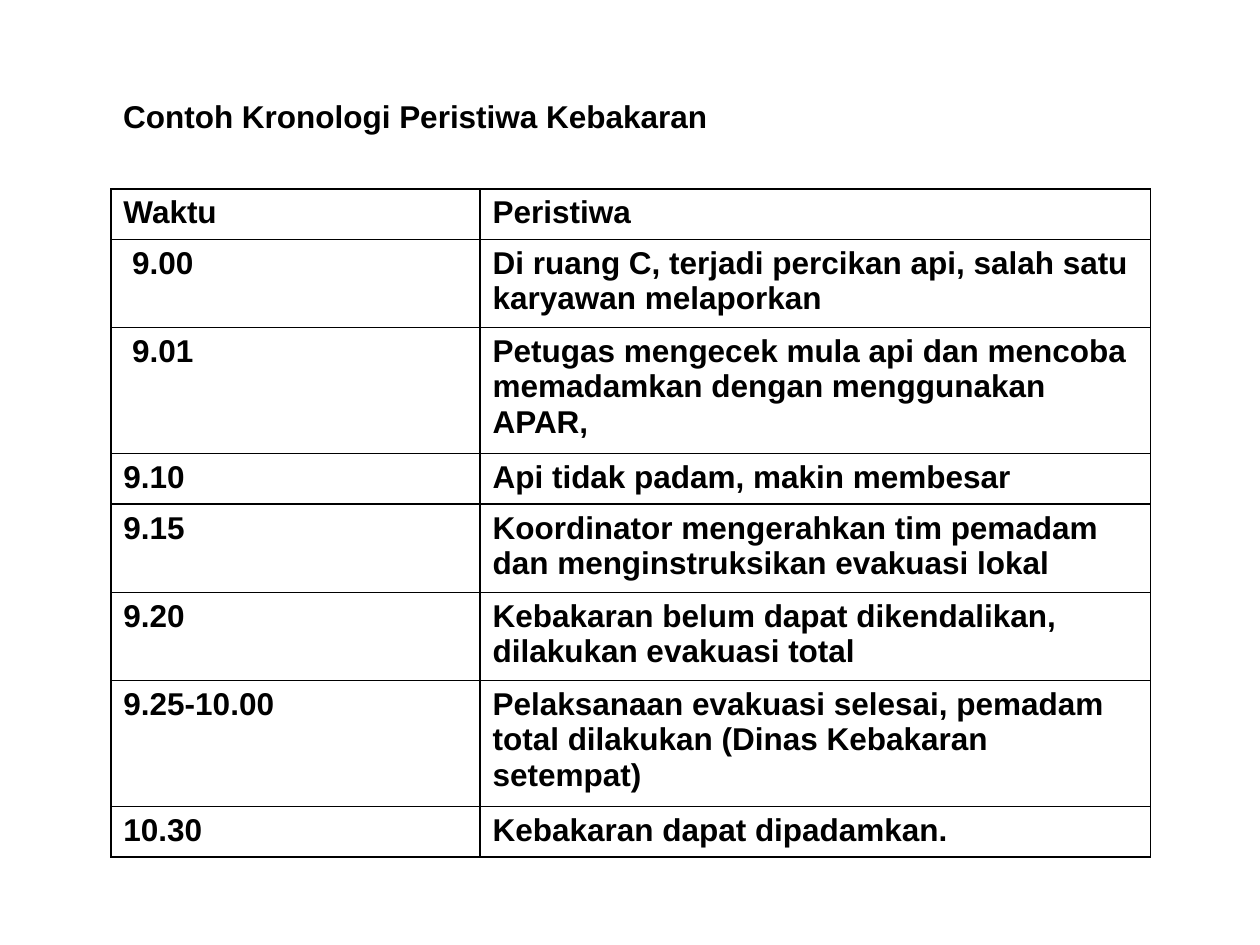
"""Build a slide with a timeline table of a fire incident."""
from dataclasses import dataclass

from lxml.etree import SubElement
from pptx import Presentation
from pptx.dml.color import RGBColor as Color
from pptx.enum.text import MSO_ANCHOR as Anchor
from pptx.oxml.ns import qn
from pptx.util import Inches, Pt


@dataclass(frozen=True)
class Theme:
    font: str = "Arial"
    ink: str = "000000"
    paper: str = "FFFFFF"
    text_size: int = 18
    border_width: int = 1


theme = Theme()
font_format = {"name": theme.font, "size": Pt(theme.text_size), "bold": True}


def write_text(text_frame, text):
    run = text_frame.paragraphs[0].add_run()
    run.text = text
    for name, value in font_format.items():
        setattr(run.font, name, value)
    run.font.color.rgb = Color.from_string(theme.ink)


def add_borders(cell):
    properties = cell._tc.get_or_add_tcPr()
    for position, side in enumerate(("lnL", "lnR", "lnT", "lnB")):
        line = SubElement(properties, qn(f"a:{side}"), w=str(Pt(theme.border_width)))
        fill = SubElement(line, qn("a:solidFill"))
        SubElement(fill, qn("a:srgbClr"), val=theme.ink)
        properties.insert(position, line)


presentation = Presentation()
presentation.slide_width = Inches(10)
presentation.slide_height = Inches(7.5)
slide = presentation.slides.add_slide(presentation.slide_layouts[6])

left, table_top = 0.88, 1.5
title = slide.shapes.add_textbox(Inches(left), Inches(0.7), Inches(4.84), Inches(0.8))
title_format = {"word_wrap": False, "vertical_anchor": Anchor.TOP, "margin_top": Inches(0.07)}
for name, value in title_format.items():
    setattr(title.text_frame, name, value)
write_text(title.text_frame, "Contoh Kronologi Peristiwa Kebakaran")

events = [
    ("Waktu", "Peristiwa", 0.4),
    (" 9.00", "Di ruang C, terjadi percikan api, salah satu karyawan melaporkan", 0.7),
    (" 9.01", "Petugas mengecek mula api dan mencoba memadamkan dengan menggunakan APAR,", 1),
    ("9.10", "Api tidak padam, makin membesar", 0.4),
    ("9.15", "Koordinator mengerahkan tim pemadam dan menginstruksikan evakuasi lokal", 0.7),
    ("9.20", "Kebakaran belum dapat dikendalikan, dilakukan evakuasi total", 0.7),
    ("9.25-10.00", "Pelaksanaan evakuasi selesai, pemadam total dilakukan (Dinas Kebakaran setempat)", 1),
    ("10.30", "Kebakaran dapat dipadamkan.", 0.4),
]
column_widths = (2.93, 5.32)
table_height = sum(height for _, _, height in events)
table = slide.shapes.add_table(
    len(events), len(column_widths), Inches(left), Inches(table_top),
    Inches(sum(column_widths)), Inches(table_height),
).table
for column, width in zip(table.columns, column_widths):
    column.width = Inches(width)

for row, (time, event, height) in zip(table.rows, events):
    row.height = Inches(height)
    for cell, text in zip(row.cells, (time, event)):
        cell.fill.solid()
        cell.fill.fore_color.rgb = Color.from_string(theme.paper)
        add_borders(cell)
        write_text(cell.text_frame, text)

presentation.save("out.pptx")
